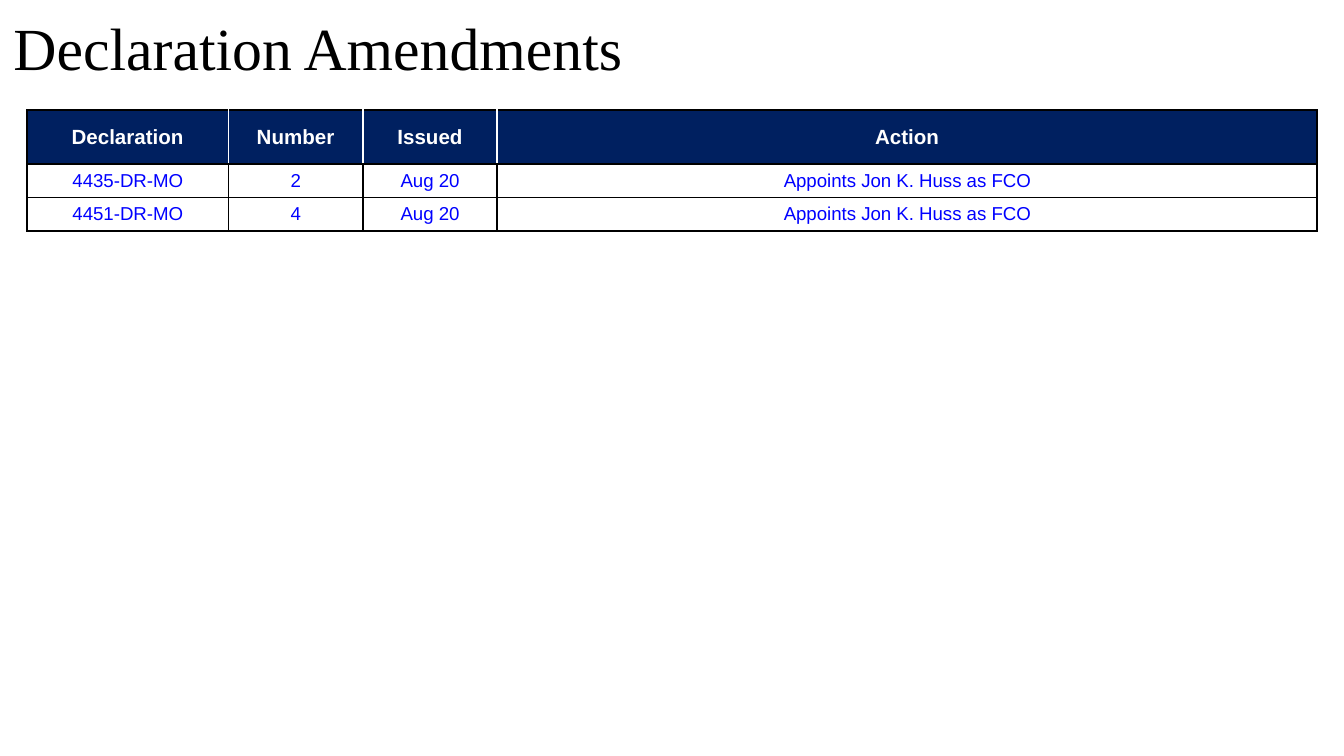
"""Build the Declaration Amendments slide with its table."""
import dataclasses

import lxml.etree
import pptx
import pptx.dml.color
import pptx.enum.text
import pptx.oxml.ns
import pptx.util

Inches = pptx.util.Inches
Pt = pptx.util.Pt


@dataclasses.dataclass(frozen=True)
class Theme:
    black: str = "000000"
    white: str = "FFFFFF"
    navy: str = "002060"
    blue: str = "0000FF"
    serif: str = "Times New Roman"
    sans: str = "Arial"
    title: int = 32
    head: int = 11
    body: int = 10
    line: int = 1


THEME = Theme()
WIDE = 10
WIDTHS = (1.5, 1, 1, 6.1)
HEIGHTS = (0.4, 0.25, 0.25)
ROWS = (
    ("Declaration", "Number", "Issued", "Action"),
    ("4435-DR-MO", "2", "Aug 20", "Appoints Jon K. Huss as FCO"),
    ("4451-DR-MO", "4", "Aug 20", "Appoints Jon K. Huss as FCO"),
)


def rgb(code):
    return pptx.dml.color.RGBColor.from_string(code)


def style(frame, face, size, color, align, bold=False):
    para = frame.paragraphs[0]
    para.alignment = align
    font = para.runs[0].font
    font.name = face
    font.size = Pt(size)
    font.bold = bold
    font.color.rgb = rgb(color)


def add_title(slide, text):
    title = slide.shapes.title
    title.left, title.top = Inches(0), Inches(0)
    title.width, title.height = Inches(WIDE), Inches(0.7)
    frame = title.text_frame
    frame.text = text
    frame.auto_size = pptx.enum.text.MSO_AUTO_SIZE.NONE
    frame.vertical_anchor = pptx.enum.text.MSO_ANCHOR.MIDDLE
    style(frame, THEME.serif, THEME.title, THEME.black,
          pptx.enum.text.PP_ALIGN.LEFT)


def set_edge(cell, side, color):
    qn = pptx.oxml.ns.qn
    edge = lxml.etree.SubElement(cell._tc.get_or_add_tcPr(), qn("a:ln" + side),
                                 w=str(int(Pt(THEME.line))))
    fill = lxml.etree.SubElement(edge, qn("a:solidFill"))
    lxml.etree.SubElement(fill, qn("a:srgbClr"), val=color)


def fill_cell(cell, text, head, first, last):
    inner = THEME.white if head else THEME.black
    edges = {
        "L": THEME.black if first else inner,
        "R": THEME.black if last else inner,
        "T": THEME.black,
        "B": THEME.black,
    }
    for side, color in edges.items():
        set_edge(cell, side, color)
    cell.fill.solid()
    cell.fill.fore_color.rgb = rgb(THEME.navy if head else THEME.white)
    inset = Inches(0.05 if head else 0)
    cell.margin_left = cell.margin_right = inset
    cell.margin_top = cell.margin_bottom = inset
    cell.vertical_anchor = pptx.enum.text.MSO_ANCHOR.MIDDLE
    cell.text_frame.text = text
    style(cell.text_frame, THEME.sans, THEME.head if head else THEME.body,
          THEME.white if head else THEME.blue,
          pptx.enum.text.PP_ALIGN.CENTER, head)


def add_grid(slide):
    table = slide.shapes.add_table(
        len(ROWS), len(WIDTHS), Inches(0.2), Inches(0.82),
        Inches(sum(WIDTHS)), Inches(sum(HEIGHTS))).table
    table.horz_banding = False
    for col, width in zip(table.columns, WIDTHS):
        col.width = Inches(width)
    for row, height in zip(table.rows, HEIGHTS):
        row.height = Inches(height)
    for r, texts in enumerate(ROWS):
        for c, text in enumerate(texts):
            fill_cell(table.cell(r, c), text, r == 0, c == 0,
                      c == len(WIDTHS) - 1)


def main():
    deck = pptx.Presentation()
    deck.slide_width = Inches(WIDE)
    deck.slide_height = Inches(WIDE * 9 / 16)
    slide = deck.slides.add_slide(deck.slide_layouts[5])
    add_title(slide, "Declaration Amendments")
    add_grid(slide)
    deck.save("out.pptx")


if __name__ == "__main__":
    main()
